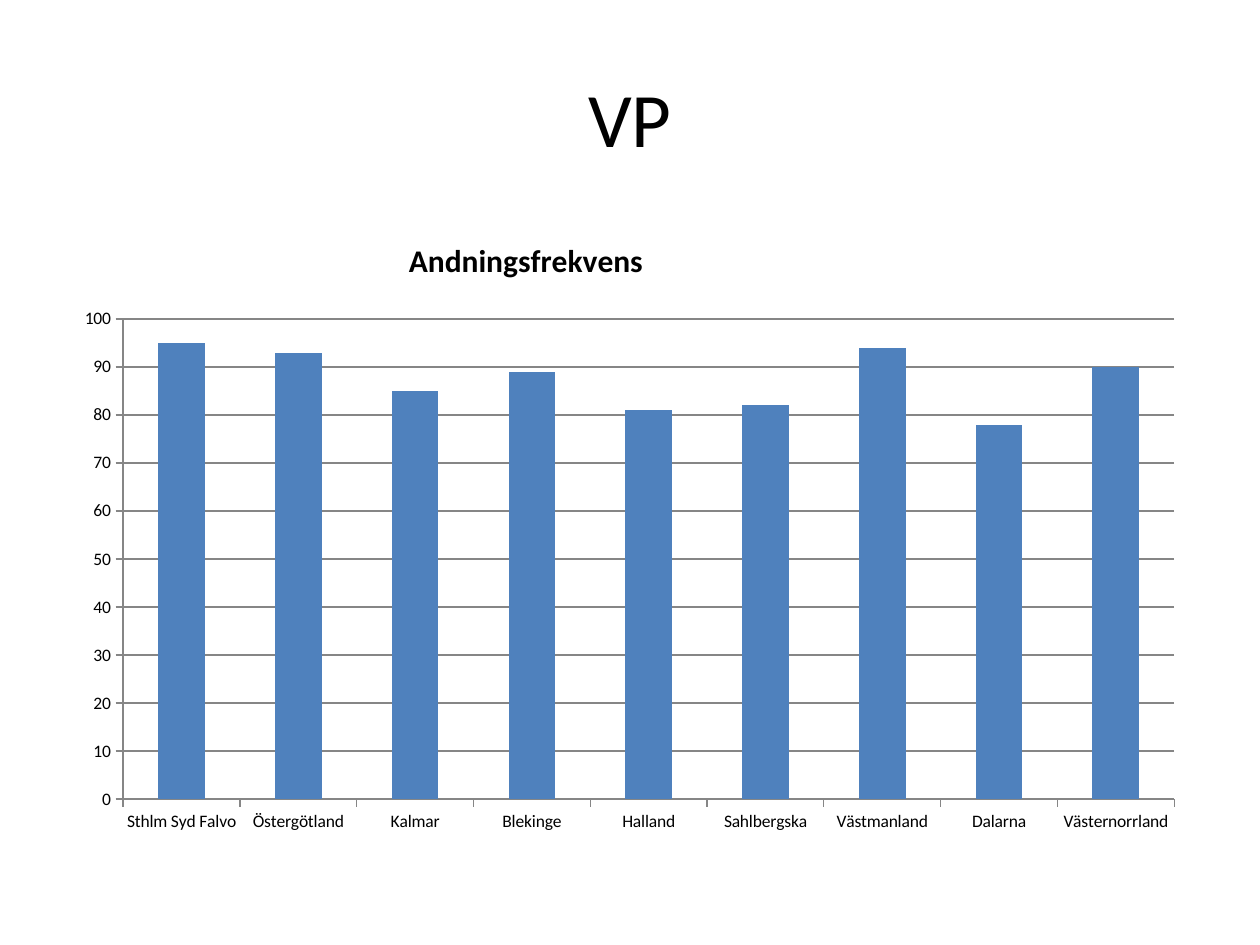
from pptx import Presentation
from pptx.chart.data import CategoryChartData
from pptx.dml.color import RGBColor
from pptx.enum.chart import XL_CHART_TYPE as CT, XL_TICK_MARK as TM
from pptx.enum.text import MSO_ANCHOR, PP_ALIGN
from pptx.oxml import parse_xml
from pptx.oxml.ns import nsdecls
from pptx.util import Pt

BLACK = RGBColor(0x00, 0x00, 0x00)
BLUE = RGBColor(0x4F, 0x81, 0xBD)
GREY = RGBColor(0x86, 0x86, 0x86)
FONT = "Calibri"

RATES = {
    "Sthlm Syd Falvo": 95,
    "Östergötland": 93,
    "Kalmar": 85,
    "Blekinge": 89,
    "Halland": 81,
    "Sahlbergska": 82,
    "Västmanland": 94,
    "Dalarna": 78,
    "Västernorrland": 90,
}


def set_font(font, size, bold=False):
    for name, value in {"name": FONT, "size": Pt(size), "bold": bold}.items():
        setattr(font, name, value)
    font.color.rgb = BLACK


def manual_layout(**fractions):
    """Return a c:layout placed by fractions of the chart area."""
    inner = '<c:layoutTarget val="inner"/>' if "w" in fractions else ""
    modes = "".join(f'<c:{k}Mode val="edge"/>' for k in "xy")
    values = "".join(f'<c:{k} val="{v}"/>' for k, v in fractions.items())
    return parse_xml(f'<c:layout {nsdecls("c")}><c:manualLayout>{inner}{modes}'
                     f'{values}</c:manualLayout></c:layout>')


def add_title(slide, text, box):
    tf = slide.shapes.add_textbox(*map(Pt, box)).text_frame
    tf.word_wrap = True
    tf.vertical_anchor = MSO_ANCHOR.MIDDLE
    p = tf.paragraphs[0]
    p.alignment = PP_ALIGN.CENTER
    r = p.add_run()
    r.text = text
    set_font(r.font, 44)


def add_chart_title(chart, text):
    tf = chart.chart_title.text_frame
    tf.text = text
    set_font(tf.paragraphs[0].runs[0].font, 18, bold=True)
    title = chart.chart_title._element
    for old in title.findall("{*}layout"):
        title.remove(old)
    title.find("{*}tx").addnext(manual_layout(x=0.3, y=0.02))


def add_rate_chart(slide, title, rates, box):
    data = CategoryChartData()
    data.categories = list(rates)
    data.add_series("Series 1", list(rates.values()))
    chart = slide.shapes.add_chart(CT.COLUMN_CLUSTERED, *map(Pt, box), data).chart
    chart.has_legend = False
    set_font(chart.font, 10)
    add_chart_title(chart, title)

    plot = chart.plots[0]
    plot.gap_width = 150
    plot.vary_by_categories = False
    fill = plot.series[0].format.fill
    fill.solid()
    fill.fore_color.rgb = BLUE

    value_axis = chart.value_axis
    scale = {"minimum_scale": 0, "maximum_scale": 100, "major_unit": 10,
             "has_major_gridlines": True}
    for name, value in scale.items():
        setattr(value_axis, name, value)
    for axis in (chart.category_axis, value_axis):
        axis.major_tick_mark = TM.OUTSIDE
    for part in (chart.category_axis, value_axis, value_axis.major_gridlines):
        part.format.line.color.rgb = GREY
        part.format.line.width = Pt(0.75)

    area = chart._chartSpace.chart.plotArea
    for old in area.findall("{*}layout"):
        area.remove(old)
    area.insert(0, manual_layout(x=0.053, y=0.158, w=0.927, h=0.77))


def main():
    prs = Presentation()
    prs.slide_width, prs.slide_height = Pt(720), Pt(540)
    slide = prs.slides.add_slide(prs.slide_layouts[6])
    add_title(slide, "VP", (36, 21.6, 648, 90))
    add_rate_chart(slide, "Andningsfrekvens", RATES, (36, 126, 648, 356.4))
    prs.save("out.pptx")


if __name__ == "__main__":
    main()
